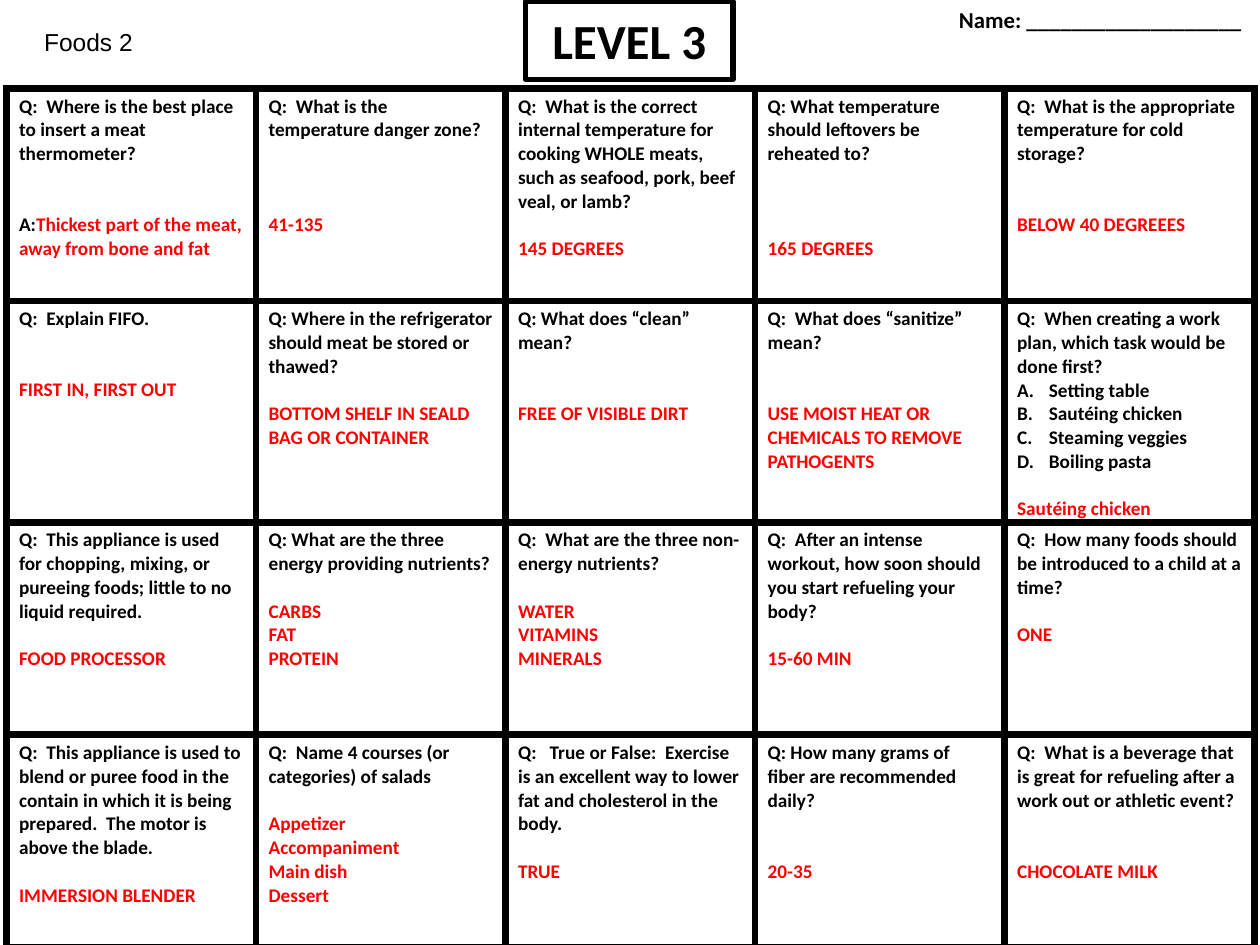
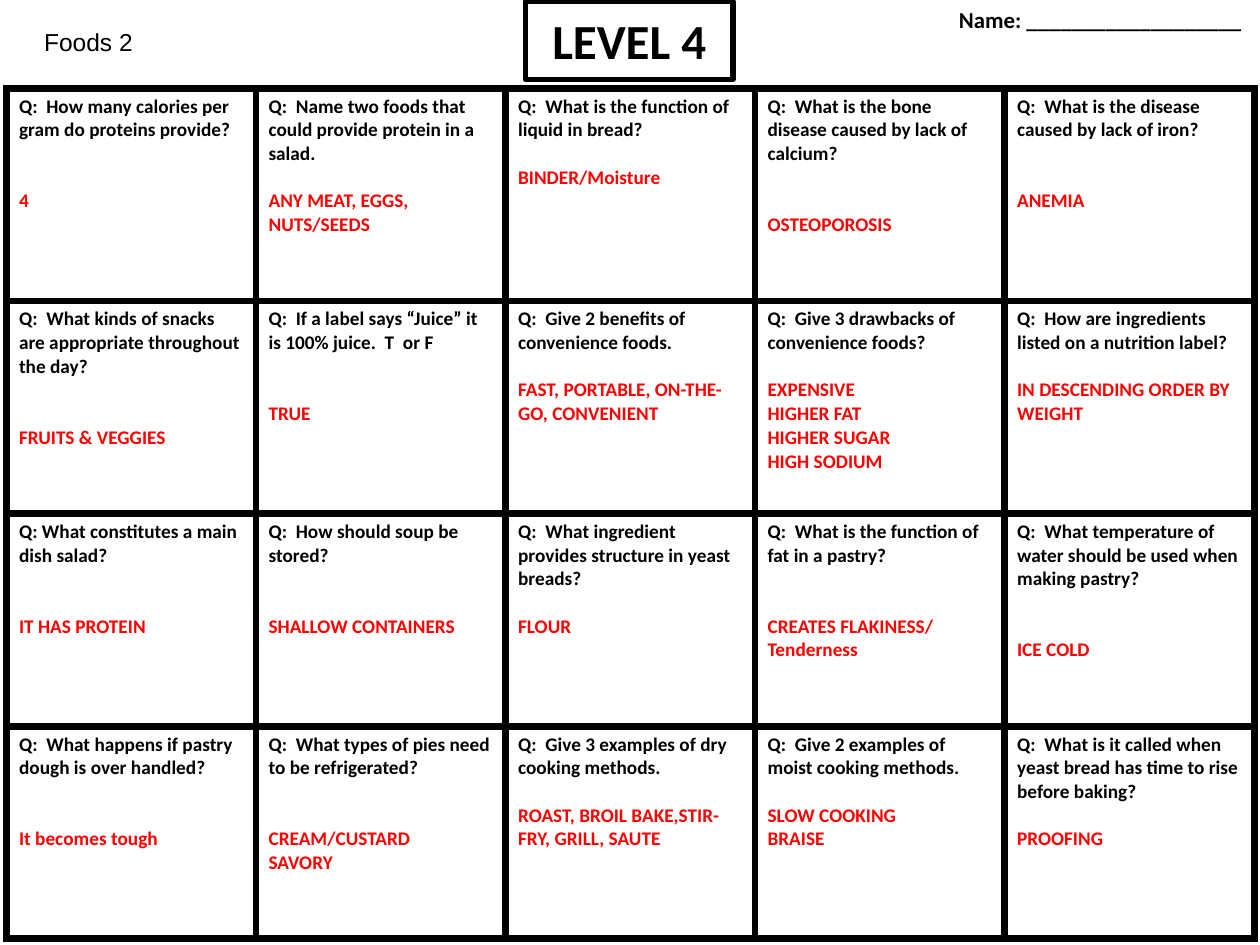
from typing import NamedTuple

from lxml import etree
from pptx import Presentation
from pptx.dml.color import RGBColor
from pptx.enum.shapes import MSO_SHAPE
from pptx.enum.text import MSO_ANCHOR, MSO_AUTO_SIZE, PP_ALIGN
from pptx.oxml.ns import qn
from pptx.util import Cm, Pt

RECTANGLE = MSO_SHAPE.RECTANGLE
MIDDLE = MSO_ANCHOR.MIDDLE
CENTER = PP_ALIGN.CENTER
FIT_SHAPE = MSO_AUTO_SIZE.SHAPE_TO_FIT_TEXT

BLACK = RGBColor(0x00, 0x00, 0x00)
WHITE = RGBColor(0xFF, 0xFF, 0xFF)
RED = RGBColor(0xFF, 0x00, 0x00)

HEADING_FONT = "Arial"
BODY_FONT = "Calibri"
CARD_SIZE = 11
LINE_HEIGHT = 13.5  # points taken by one line of card text
BORDER_WIDTH = Pt(4.5)
CHOICE_INDENT = Cm(0.64)

# Boxes: left, top, width, height
COURSE_BOX = Cm(0.64), Cm(0.43), Cm(4.24), Cm(0.86)
LEVEL_BOX = Cm(10.59), Cm(0.03), Cm(4.19), Cm(1.57)
NAME_BOX = Cm(18.95), Cm(0), Cm(6.45), Cm(0.91)
BOARD_BOX = Cm(0.13), Cm(1.78), Cm(25.15), Cm(17.15)


class Card(NamedTuple):
    question: str
    gap: int  # lines left free above the answer
    answers: tuple
    choices: tuple = ()
    label: str = ""


LEVEL_3 = [
    [
        Card("Q:  Where is the best place to insert a meat thermometer?", 2,
             ("Thickest part of the meat, away from bone and fat",), label="A:"),
        Card("Q:  What is the temperature danger zone?", 3, ("41-135",)),
        Card("Q:  What is the correct internal temperature for cooking WHOLE meats, "
             "such as seafood, pork, beef veal, or lamb?", 1, ("145 DEGREES",)),
        Card("Q: What temperature should leftovers be reheated to?", 3, ("165 DEGREES",)),
        Card("Q:  What is the appropriate temperature for cold storage?", 2,
             ("BELOW 40 DEGREEES",)),
    ],
    [
        Card("Q:  Explain FIFO.", 2, ("FIRST IN, FIRST OUT",)),
        Card("Q: Where in the refrigerator should meat be stored or thawed?", 1,
             ("BOTTOM SHELF IN SEALD BAG OR CONTAINER",)),
        Card("Q: What does “clean” mean?", 2, ("FREE OF VISIBLE DIRT",)),
        Card("Q:  What does “sanitize” mean?", 2,
             ("USE MOIST HEAT OR CHEMICALS TO REMOVE PATHOGENTS",)),
        Card("Q:  When creating a work plan, which task would be done first?", 1,
             ("Sautéing chicken",),
             choices=("Setting table", "Sautéing chicken", "Steaming veggies", "Boiling pasta")),
    ],
    [
        Card("Q:  This appliance is used for chopping, mixing, or pureeing foods; "
             "little to no liquid required.", 1, ("FOOD PROCESSOR",)),
        Card("Q: What are the three energy providing nutrients?", 1,
             ("CARBS", "FAT", "PROTEIN")),
        Card("Q:  What are the three non-energy nutrients?", 1,
             ("WATER", "VITAMINS", "MINERALS")),
        Card("Q:  After an intense workout, how soon should you start refueling your body?", 1,
             ("15-60 MIN",)),
        Card("Q:  How many foods should be introduced to a child at a time?", 1, ("ONE",)),
    ],
    [
        Card("Q:  This appliance is used to blend or puree food in the contain in which "
             "it is being prepared.  The motor is above the blade.", 1, ("IMMERSION BLENDER",)),
        Card("Q:  Name 4 courses (or categories) of salads", 1,
             ("Appetizer", "Accompaniment", "Main dish", "Dessert")),
        Card("Q:   True or False:  Exercise is an excellent way to lower fat and "
             "cholesterol in the body.", 1, ("TRUE",)),
        Card("Q: How many grams of fiber are recommended daily?", 2, ("20-35",)),
        Card("Q:  What is a beverage that is great for refueling after a work out or "
             "athletic event?", 2, ("CHOCOLATE MILK",)),
    ],
]

LEVEL_4 = [
    [
        Card("Q:  How many calories per gram do proteins provide?", 2, ("4",)),
        Card("Q:  Name two foods that could provide protein in a salad.", 1,
             ("ANY MEAT, EGGS, NUTS/SEEDS",)),
        Card("Q:  What is the function of liquid in bread?", 1, ("BINDER/Moisture",)),
        Card("Q:  What is the bone disease caused by lack of calcium?", 2, ("OSTEOPOROSIS",)),
        Card("Q:  What is the disease caused by lack of iron?", 2, ("ANEMIA",)),
    ],
    [
        Card("Q:  What kinds of snacks are appropriate throughout the day?", 2,
             ("FRUITS & VEGGIES",)),
        Card("Q:  If a label says “Juice” it is 100% juice.  T  or F", 2, ("TRUE",)),
        Card("Q:  Give 2 benefits of convenience foods.", 1,
             ("FAST, PORTABLE, ON-THE-GO, CONVENIENT",)),
        Card("Q:  Give 3 drawbacks of convenience foods?", 1,
             ("EXPENSIVE", "HIGHER FAT", "HIGHER SUGAR", "HIGH SODIUM")),
        Card("Q:  How are ingredients listed on a nutrition label?", 1,
             ("IN DESCENDING ORDER BY WEIGHT",)),
    ],
    [
        Card("Q: What constitutes a main dish salad?", 2, ("IT HAS PROTEIN",)),
        Card("Q:  How should soup be stored?", 2, ("SHALLOW CONTAINERS",)),
        Card("Q:  What ingredient provides structure in yeast breads?", 1, ("FLOUR",)),
        Card("Q:  What is the function of fat in a pastry?", 2,
             ("CREATES FLAKINESS/ Tenderness",)),
        Card("Q:  What temperature of water should be used when making pastry?", 2,
             ("ICE COLD",)),
    ],
    [
        Card("Q:  What happens if pastry dough is over handled?", 2, ("It becomes tough",)),
        Card("Q:  What types of pies need to be refrigerated?", 2,
             ("CREAM/CUSTARD", "SAVORY")),
        Card("Q:  Give 3 examples of dry cooking methods.", 1,
             ("ROAST, BROIL BAKE,STIR-FRY, GRILL, SAUTE",)),
        Card("Q:  Give 2 examples of moist cooking methods.", 1, ("SLOW COOKING", "BRAISE")),
        Card("Q:  What is it called when yeast bread has time to rise before baking?", 1,
             ("PROOFING",)),
    ],
]


def format_run(run, size, color=BLACK, font=BODY_FONT, bold=True):
    run.font.name = font
    run.font.size = Pt(size)
    run.font.bold = bold
    run.font.color.rgb = color


def add_run(paragraph, text, color):
    run = paragraph.add_run()
    run.text = text
    format_run(run, CARD_SIZE, color)


def add_text_box(slide, box, text):
    """Add a wrapping text box and return its text frame."""
    text_frame = slide.shapes.add_textbox(*box).text_frame
    text_frame.word_wrap = True
    text_frame.text = text
    return text_frame


def add_header(slide, level):
    # Course label
    course = add_text_box(slide, COURSE_BOX, "Foods 2")
    course.auto_size = FIT_SHAPE
    format_run(course.paragraphs[0].runs[0], 14, font=HEADING_FONT, bold=False)

    # Framed level title
    frame = slide.shapes.add_shape(RECTANGLE, *LEVEL_BOX)
    frame.shadow.inherit = False
    frame.fill.background()
    frame.line.color.rgb = BLACK
    frame.line.width = Pt(3)
    frame.text_frame.text = level
    frame.text_frame.vertical_anchor = MIDDLE
    title = frame.text_frame.paragraphs[0]
    title.alignment = CENTER
    format_run(title.runs[0], 28)

    # Line for the student's name
    name = add_text_box(slide, NAME_BOX, "Name: ___________________").paragraphs[0]
    name.alignment = CENTER
    format_run(name.runs[0], 13)


def set_borders(cell):
    properties = cell._tc.get_or_add_tcPr()
    for side in ("a:lnL", "a:lnR", "a:lnT", "a:lnB"):
        line = etree.SubElement(properties, qn(side), w=str(BORDER_WIDTH))
        fill = etree.SubElement(line, qn("a:solidFill"))
        etree.SubElement(fill, qn("a:srgbClr"), val=str(BLACK))


def number_with_letters(paragraph):
    properties = paragraph._p.get_or_add_pPr()
    properties.set("marL", str(CHOICE_INDENT))
    properties.set("indent", str(-CHOICE_INDENT))
    etree.SubElement(properties, qn("a:buFont"), typeface="+mj-lt")
    etree.SubElement(properties, qn("a:buAutoNum"), type="alphaUcPeriod")


def fill_card(cell, card):
    set_borders(cell)
    cell.fill.solid()
    cell.fill.fore_color.rgb = WHITE
    text_frame = cell.text_frame
    add_run(text_frame.paragraphs[0], card.question, BLACK)
    for choice in card.choices:
        paragraph = text_frame.add_paragraph()
        number_with_letters(paragraph)
        add_run(paragraph, choice, BLACK)
    for index, answer in enumerate(card.answers):
        paragraph = text_frame.add_paragraph()
        if index == 0:
            paragraph.space_before = Pt(card.gap * LINE_HEIGHT)
            if card.label:
                add_run(paragraph, card.label, BLACK)
        add_run(paragraph, answer, RED)


def add_board(slide, box, cards):
    """Add the grid of question cards, sharing the box equally."""
    table = slide.shapes.add_table(len(cards), len(cards[0]), *box).table
    table.first_row = False
    table.horz_banding = False
    for row, row_cards in enumerate(cards):
        for column, card in enumerate(row_cards):
            fill_card(table.cell(row, column), card)


def add_level_slide(presentation, level, cards):
    slide = presentation.slides.add_slide(presentation.slide_layouts[6])
    add_header(slide, level)
    add_board(slide, BOARD_BOX, cards)


def main():
    presentation = Presentation()
    presentation.slide_width = Cm(25.4)
    presentation.slide_height = Cm(19.05)
    add_level_slide(presentation, "LEVEL 3", LEVEL_3)
    add_level_slide(presentation, "LEVEL 4", LEVEL_4)
    presentation.save("out.pptx")


if __name__ == "__main__":
    main()
